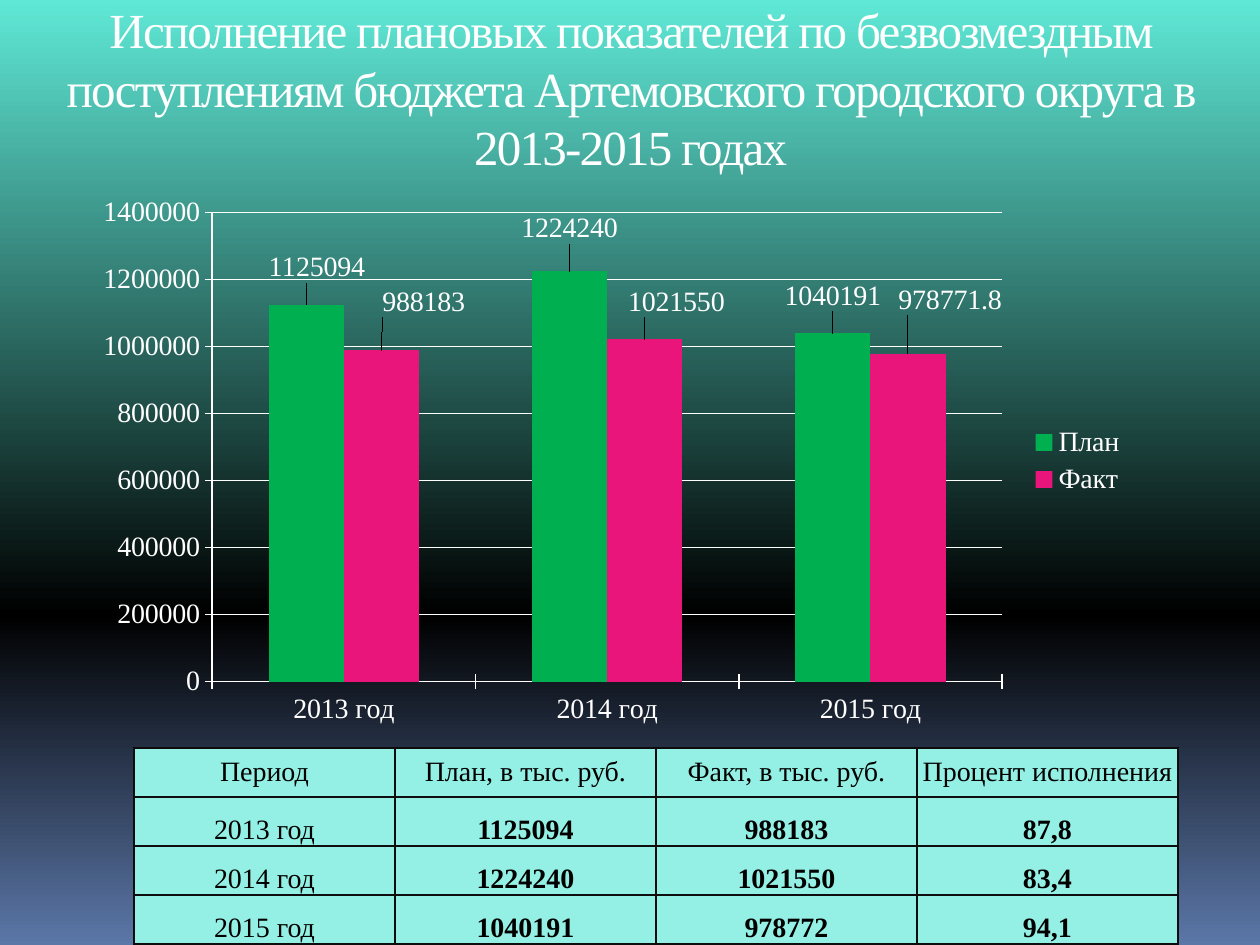
from copy import deepcopy

from lxml import etree
from pptx import Presentation
from pptx.chart.data import CategoryChartData
from pptx.dml.color import RGBColor
from pptx.enum.chart import (XL_CHART_TYPE, XL_LABEL_POSITION,
                             XL_LEGEND_POSITION, XL_TICK_MARK)
from pptx.enum.text import MSO_ANCHOR, MSO_AUTO_SIZE, PP_ALIGN
from pptx.oxml import parse_xml
from pptx.oxml.ns import nsdecls, qn
from pptx.util import Emu, Pt

COLUMNS = XL_CHART_TYPE.COLUMN_CLUSTERED
OUTSIDE = XL_LABEL_POSITION.OUTSIDE_END
RIGHT = XL_LEGEND_POSITION.RIGHT
CROSS, NO_TICK = XL_TICK_MARK.CROSS, XL_TICK_MARK.NONE
MIDDLE, BOTTOM = MSO_ANCHOR.MIDDLE, MSO_ANCHOR.BOTTOM
CENTER = PP_ALIGN.CENTER
NO_FIT = MSO_AUTO_SIZE.NONE

WHITE = RGBColor(0xFF, 0xFF, 0xFF)
BLACK = RGBColor(0x00, 0x00, 0x00)
TURQUOISE = RGBColor(0x5F, 0xE8, 0xD6)
SLATE = RGBColor(0x5B, 0x77, 0xA8)
GREEN = RGBColor(0x00, 0xB0, 0x50)
PINK = RGBColor(0xEA, 0x15, 0x7A)
CELL = RGBColor(0x94, 0xF0, 0xE4)
BORDER = RGBColor(0x0D, 0x0D, 0x0D)

FONT = "Times New Roman"
PX = 914400 // 126
CHART_W, CHART_H = 1053, 552

TITLE = ("Исполнение плановых показателей по безвозмездным поступлениям "
         "бюджета Артемовского городского округа в 2013-2015 годах")
YEARS = ["2013 год", "2014 год", "2015 год"]
# Name, colour, values, label shifts in px
SERIES = [
    ("План", GREEN, [1125094, 1224240, 1040191],
     [(9, -14), (-5, -24), (0, -17)]),
    ("Факт", PINK, [988183, 1021550, 978771.8],
     [(40, -30), (32, -18), (40, -31)]),
]
ROWS = [
    ["Период", "План, в тыс. руб.", "Факт, в тыс. руб.", "Процент исполнения"],
    ["2013 год", "1125094", "988183", "87,8"],
    ["2014 год", "1224240", "1021550", "83,4"],
    ["2015 год", "1040191", "978772", "94,1"],
]


def px(*lengths):
    return [Emu(n * PX) for n in lengths]


def style_font(font, color, size=16):
    font.name = FONT
    font.size = Pt(size)
    font.color.rgb = color


def set_background(s):
    fill = s.background.fill
    fill.gradient()
    fill.gradient_angle = 270
    first, last = fill.gradient_stops
    first.color.rgb, first.position = TURQUOISE, 0
    last.color.rgb, last.position = SLATE, 1
    # Black stop between the two ends
    stops = s._element.find(".//" + qn("a:gsLst"))
    middle = deepcopy(stops[0])
    middle.set("pos", "65000")
    middle.find(qn("a:srgbClr")).set("val", str(BLACK))
    stops.insert(1, middle)


def add_title(s):
    sp = s.shapes.title
    sp.left, sp.top, sp.width, sp.height = px(25, 0, 1211, 175)
    tf = sp.text_frame
    tf.word_wrap, tf.auto_size, tf.vertical_anchor = True, NO_FIT, MIDDLE
    p = tf.paragraphs[0]
    p.alignment = CENTER
    r = p.add_run()
    r.text = TITLE
    style_font(r.font, WHITE, 28)
    r.font._element.set("spc", "-100")


def manual_layout(x, y, w=None, h=None):
    parts = f'<c:x val="{x:.2f}"/><c:y val="{y:.2f}"/>'
    if w:
        parts = ('<c:layoutTarget val="inner"/><c:xMode val="edge"/>'
                 f'<c:yMode val="edge"/>{parts}'
                 f'<c:w val="{w:.2f}"/><c:h val="{h:.2f}"/>')
    return parse_xml(f'<c:layout {nsdecls("c")}><c:manualLayout>{parts}'
                     '</c:manualLayout></c:layout>')


def style_axis(axis):
    style_font(axis.tick_labels.font, WHITE)
    axis.major_tick_mark, axis.minor_tick_mark = CROSS, NO_TICK
    axis.format.line.color.rgb = WHITE
    axis.format.line.width = Pt(1)


def style_series(series, color, shifts):
    series.format.fill.solid()
    series.format.fill.fore_color.rgb = color
    labels = series.data_labels
    labels.show_value = True
    labels.position = OUTSIDE
    style_font(labels.font, WHITE)
    for i in range(len(shifts)):
        label = series.points[i].data_label
        label.position = OUTSIDE
        style_font(label.font, WHITE)
    for dLbl, (dx, dy) in zip(series._element.iter(qn("c:dLbl")), shifts):
        dLbl.insert(1, manual_layout(dx / CHART_W, dy / CHART_H))


def add_column_chart(s):
    data = CategoryChartData()
    data.categories = YEARS
    for name, _, values, _ in SERIES:
        data.add_series(name, values)
    chart = s.shapes.add_chart(COLUMNS, *px(86, 185, CHART_W, CHART_H),
                               data).chart
    chart.has_title = False
    style_font(chart.font, WHITE)

    # Plot area
    plot = chart.plots[0]
    plot.gap_width, plot.overlap, plot.vary_by_categories = 150, 0, False
    area = chart._chartSpace.find(".//" + qn("c:plotArea"))
    for old in area.findall(qn("c:layout")):
        area.remove(old)
    area.insert(0, manual_layout(0.12, 0.05, 0.75, 0.85))
    for series, (_, color, _, shifts) in zip(plot.series, SERIES):
        style_series(series, color, shifts)

    # Axes and legend
    style_axis(chart.category_axis)
    axis = chart.value_axis
    style_axis(axis)
    axis.minimum_scale, axis.maximum_scale, axis.major_unit = 0, 1400000, 200000
    axis.major_gridlines.format.line.color.rgb = WHITE
    axis.major_gridlines.format.line.width = Pt(1)
    chart.has_legend = True
    chart.legend.position = RIGHT
    chart.legend.include_in_layout = False
    style_font(chart.legend.font, WHITE)


def add_borders(cell):
    tcPr = cell._tc.get_or_add_tcPr()
    for i, side in enumerate(("lnL", "lnR", "lnT", "lnB")):
        ln = etree.Element(qn(f"a:{side}"), w=str(Pt(1)))
        fill = etree.SubElement(ln, qn("a:solidFill"))
        etree.SubElement(fill, qn("a:srgbClr"), val=str(BORDER))
        tcPr.insert(i, ln)


def fill_cell(cell, text, anchor, bold):
    cell.fill.solid()
    cell.fill.fore_color.rgb = CELL
    cell.margin_left = cell.margin_right = 0
    cell.margin_top = cell.margin_bottom = 0
    cell.vertical_anchor = anchor
    p = cell.text_frame.paragraphs[0]
    p.text = text
    p.alignment = CENTER
    style_font(p.font, BLACK)
    p.font.bold = bold
    add_borders(cell)


def add_results_table(s):
    table = s.shapes.add_table(len(ROWS), len(ROWS[0]),
                               *px(134, 748, 1044, 196)).table
    for i, row in enumerate(ROWS):
        for j, text in enumerate(row):
            fill_cell(table.cell(i, j), text, BOTTOM if i else MIDDLE,
                      i > 0 and j > 0)


def main():
    prs = Presentation()
    prs.slide_width, prs.slide_height = px(1260, 945)
    s = prs.slides.add_slide(prs.slide_layouts[5])
    set_background(s)
    add_title(s)
    add_column_chart(s)
    add_results_table(s)
    prs.save("out.pptx")


if __name__ == "__main__":
    main()
